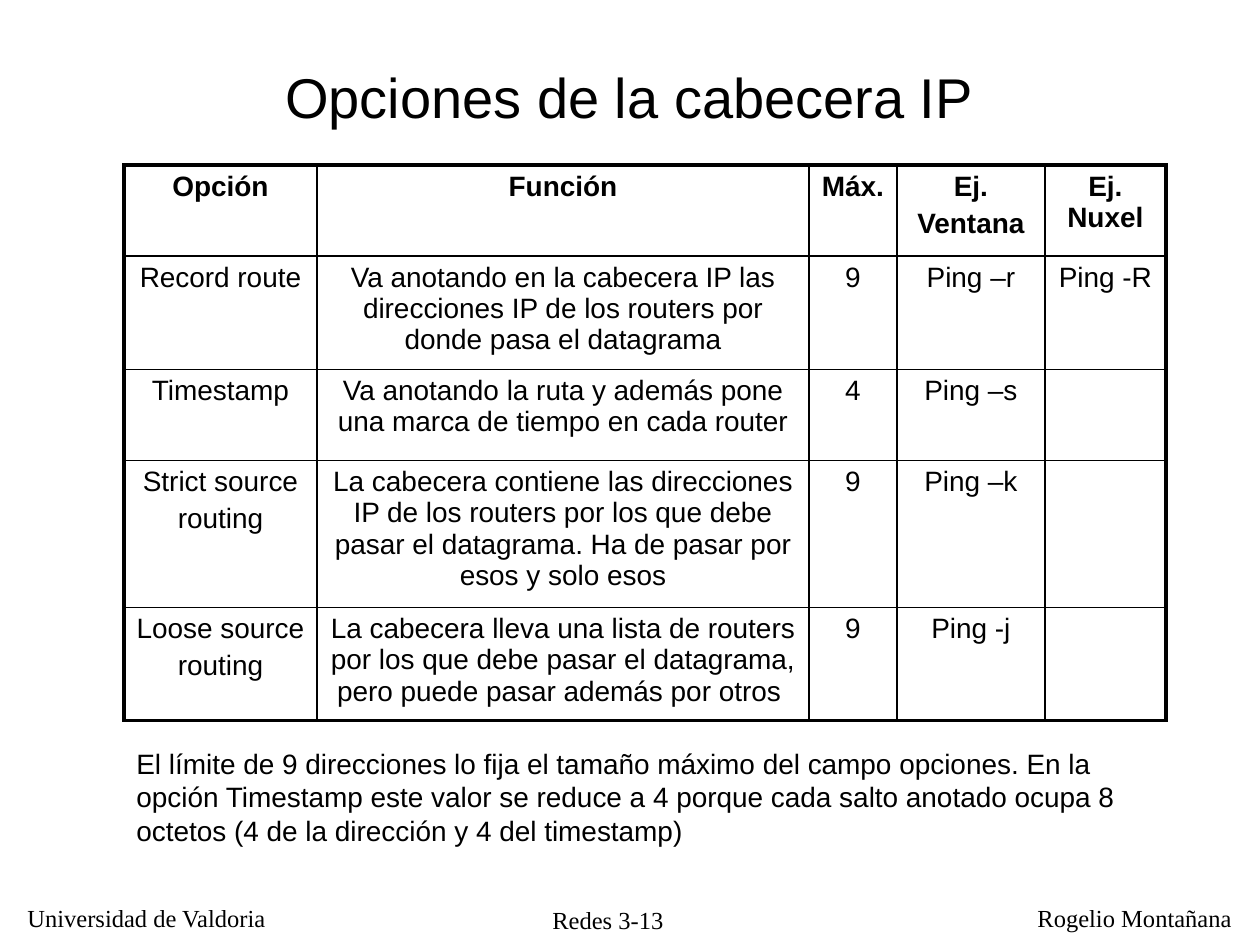
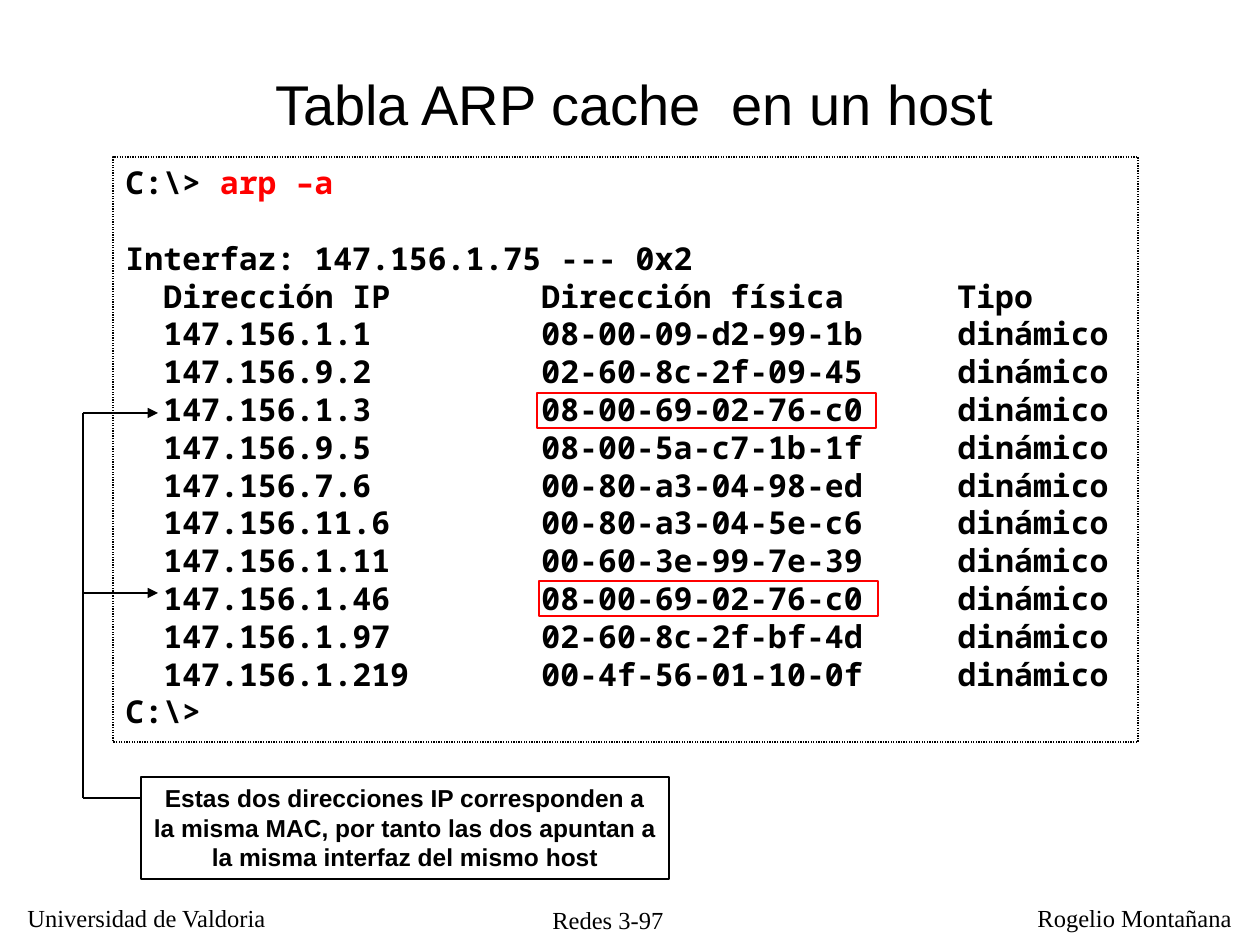
from dataclasses import dataclass

from lxml.etree import SubElement
from pptx import Presentation
from pptx.dml.color import RGBColor
from pptx.enum.dml import MSO_LINE
from pptx.enum.shapes import MSO_CONNECTOR, MSO_SHAPE
from pptx.enum.text import MSO_ANCHOR, PP_ALIGN
from pptx.oxml.ns import qn
from pptx.util import Emu, Pt

PX_PER_INCH = 126
EMU_PER_PX = 914400 / PX_PER_INCH
TITLE_ONLY = 5


@dataclass(frozen=True)
class Theme:
    ink: RGBColor = RGBColor(0, 0, 0)
    red: RGBColor = RGBColor(255, 0, 0)
    sans: str = "Arial"
    mono: str = "Noto Sans Mono"
    serif: str = "Times New Roman"
    title: int = 32
    console: int = 18
    body: int = 16
    small: int = 14
    thin: float = 0.75
    grid: float = 1
    frame: float = 2.25


THEME = Theme()

# Slide content
OPTION_COLS = [193, 492, 88, 148, 121]
OPTION_ROW_HEIGHTS = [91, 113, 91, 147, 113]
OPTIONS = [
    ["Opción", "Función", "Máx.", "Ej.\nVentana", "Ej. Nuxel"],
    ["Record route",
     "Va anotando en la cabecera IP las direcciones IP de los routers por "
     "donde pasa el datagrama", "9", "Ping –r", "Ping -R"],
    ["Timestamp",
     "Va anotando la ruta y además pone una marca de tiempo en cada router",
     "4", "Ping –s", ""],
    ["Strict source\nrouting",
     "La cabecera contiene las direcciones IP de los routers por los que debe "
     "pasar el datagrama. Ha de pasar por esos y solo esos", "9", "Ping –k", ""],
    ["Loose source\nrouting",
     "La cabecera lleva una lista de routers por los que debe pasar el "
     "datagrama, pero puede pasar además por otros ", "9", "Ping -j", ""],
]
LIMIT_NOTE = (
    "El límite de 9 direcciones lo fija el tamaño máximo del campo opciones. En "
    "la opción Timestamp este valor se reduce a 4 porque cada salto anotado "
    "ocupa 8 octetos (4 de la dirección y 4 del timestamp)")

ARP_TABS = [38, 416, 832]
ARP_HEADER = ("Dirección IP", "Dirección física", "Tipo")
ARP_ENTRIES = [
    ("147.156.1.1", "08-00-09-d2-99-1b"),
    ("147.156.9.2", "02-60-8c-2f-09-45"),
    ("147.156.1.3", "08-00-69-02-76-c0"),
    ("147.156.9.5", "08-00-5a-c7-1b-1f"),
    ("147.156.7.6", "00-80-a3-04-98-ed"),
    ("147.156.11.6", "00-80-a3-04-5e-c6"),
    ("147.156.1.11", "00-60-3e-99-7e-39"),
    ("147.156.1.46", "08-00-69-02-76-c0"),
    ("147.156.1.97", "02-60-8c-2f-bf-4d"),
    ("147.156.1.219", "00-4f-56-01-10-0f"),
]
SAME_MAC_NOTE = (
    "Estas dos direcciones IP corresponden a la misma MAC, por tanto las dos "
    "apuntan a la misma interfaz del mismo host")


def px(n):
    return Emu(round(n * EMU_PER_PX))


def box(x, y, w, h):
    return px(x), px(y), px(w), px(h)


# Text
def style(p, size, font=THEME.sans, bold=False, align=PP_ALIGN.LEFT):
    p.alignment = align
    p.font.size = Pt(size)
    p.font.name = font
    p.font.bold = bold
    p.font.color.rgb = THEME.ink


def set_text(tf, text, size, **look):
    tf.text = text
    for p in tf.paragraphs:
        style(p, size, **look)


def add_text(s, text, bounds, size, wrap=True, **look):
    tf = s.shapes.add_textbox(*box(*bounds)).text_frame
    tf.word_wrap = wrap
    set_text(tf, text, size, **look)


def add_footer(s, page):
    for text, bounds, align in [
        (f"Redes {page}", (526, 899, 164, 38), PP_ALIGN.CENTER),
        ("Universidad de Valdoria", (15, 897, 268, 42), PP_ALIGN.LEFT),
        ("Rogelio Montañana", (1025, 897, 220, 42), PP_ALIGN.LEFT),
    ]:
        add_text(s, text, bounds, THEME.small, wrap=False,
                 font=THEME.serif, align=align)


def add_slide(prs, title, title_bounds, page):
    s = prs.slides.add_slide(prs.slide_layouts[TITLE_ONLY])
    sp = s.shapes.title
    sp.left, sp.top, sp.width, sp.height = box(*title_bounds)
    sp.text_frame.vertical_anchor = MSO_ANCHOR.MIDDLE
    set_text(sp.text_frame, title, THEME.title, align=PP_ALIGN.CENTER)
    add_footer(s, page)
    return s


# Outlined boxes and lines
def add_outline(s, bounds, color=THEME.ink, width=THEME.thin):
    sp = s.shapes.add_shape(MSO_SHAPE.RECTANGLE, *box(*bounds))
    sp.shadow.inherit = False
    sp.fill.background()
    sp.line.color.rgb = color
    sp.line.width = Pt(width)
    sp.text_frame.word_wrap = True
    sp.text_frame.vertical_anchor = MSO_ANCHOR.TOP
    return sp


def add_line(s, x1, y1, x2, y2, arrow=False):
    cx = s.shapes.add_connector(
        MSO_CONNECTOR.STRAIGHT, px(x1), px(y1), px(x2), px(y2))
    cx.line.color.rgb = THEME.ink
    cx.line.width = Pt(THEME.thin)
    if arrow:
        SubElement(cx.line._get_or_add_ln(), qn("a:tailEnd"), type="triangle")
    SubElement(cx._element.spPr, qn("a:effectLst"))


# Table
def set_border(cell, side, width):
    ln = SubElement(cell._tc.get_or_add_tcPr(), qn(f"a:{side}"), w=str(Pt(width)))
    fill = SubElement(ln, qn("a:solidFill"))
    SubElement(fill, qn("a:srgbClr"), val=str(THEME.ink))


def add_grid(s, x, y, cols, heights, rows):
    frame = s.shapes.add_table(
        len(rows), len(cols), *box(x, y, sum(cols), sum(heights)))
    table = frame.table
    table.first_row = table.horz_banding = False
    for col, w in zip(table.columns, cols):
        col.width = px(w)
    for row, h in zip(table.rows, heights):
        row.height = px(h)
    for i, row in enumerate(rows):
        for j, text in enumerate(row):
            cell = table.cell(i, j)
            outer = {"lnL": j == 0, "lnR": j == len(cols) - 1,
                     "lnT": i == 0, "lnB": i == len(rows) - 1}
            for side, on_frame in outer.items():
                set_border(cell, side, THEME.frame if on_frame else THEME.grid)
            cell.fill.background()
            set_text(cell.text_frame, text, THEME.body, bold=i == 0,
                     align=PP_ALIGN.CENTER)
            for p in cell.text_frame.paragraphs:
                p.space_before = Pt(THEME.body * 0.2)


# Console listing
def add_tabs(p, stops):
    tabs = SubElement(p._p.get_or_add_pPr(), qn("a:tabLst"))
    for stop in stops:
        SubElement(tabs, qn("a:tab"), pos=str(px(stop)), algn="l")


def add_console(s, bounds):
    sp = add_outline(s, bounds)
    sp.line.dash_style = MSO_LINE.ROUND_DOT
    tf = sp.text_frame
    rows = [ARP_HEADER] + [(ip, mac, "dinámico") for ip, mac in ARP_ENTRIES]
    lines = ["C:\\> ", "Interfaz: 147.156.1.75 --- 0x2"]
    lines += ["\t" + "\t".join(row) for row in rows] + ["C:\\>"]
    tf.text = "\n".join(lines)
    for p in tf.paragraphs:
        add_tabs(p, ARP_TABS)
        style(p, THEME.console, font=THEME.mono, bold=True)
    command, interface = tf.paragraphs[:2]
    r = command.add_run()
    r.text = "arp –a"
    r.font.color.rgb = THEME.red
    interface.space_before = Pt(THEME.console * 1.2)


def build_options_slide(prs):
    s = add_slide(prs, "Opciones de la cabecera IP", (94, 56, 1071, 81), "3-13")
    add_grid(s, 124, 165, OPTION_COLS, OPTION_ROW_HEIGHTS, OPTIONS)
    add_text(s, LIMIT_NOTE, (124, 740, 1042, 113), THEME.body)


def build_arp_slide(prs):
    s = add_slide(prs, "Tabla ARP cache  en un host ", (161, 63, 963, 80), "3-97")
    add_console(s, (113, 157, 1025, 585))
    # Callout linked to the two entries that share a MAC
    sp = add_outline(s, (141, 777, 528, 102))
    set_text(sp.text_frame, SAME_MAC_NOTE, THEME.small, bold=True,
             align=PP_ALIGN.CENTER)
    bus_x, note_y = 83, 798
    entries_y = [413, 593]
    add_line(s, 141, note_y, bus_x, note_y)
    add_line(s, bus_x, entries_y[0], bus_x, note_y)
    for y in entries_y:
        add_line(s, bus_x, y, 158, y, arrow=True)
    for x, y in [(537, 393), (539, 581)]:
        add_outline(s, (x, y, 339, 35), THEME.red, THEME.grid)


def main():
    prs = Presentation()
    prs.slide_width, prs.slide_height = px(1260), px(945)
    build_options_slide(prs)
    build_arp_slide(prs)
    prs.save("out.pptx")


if __name__ == "__main__":
    main()
